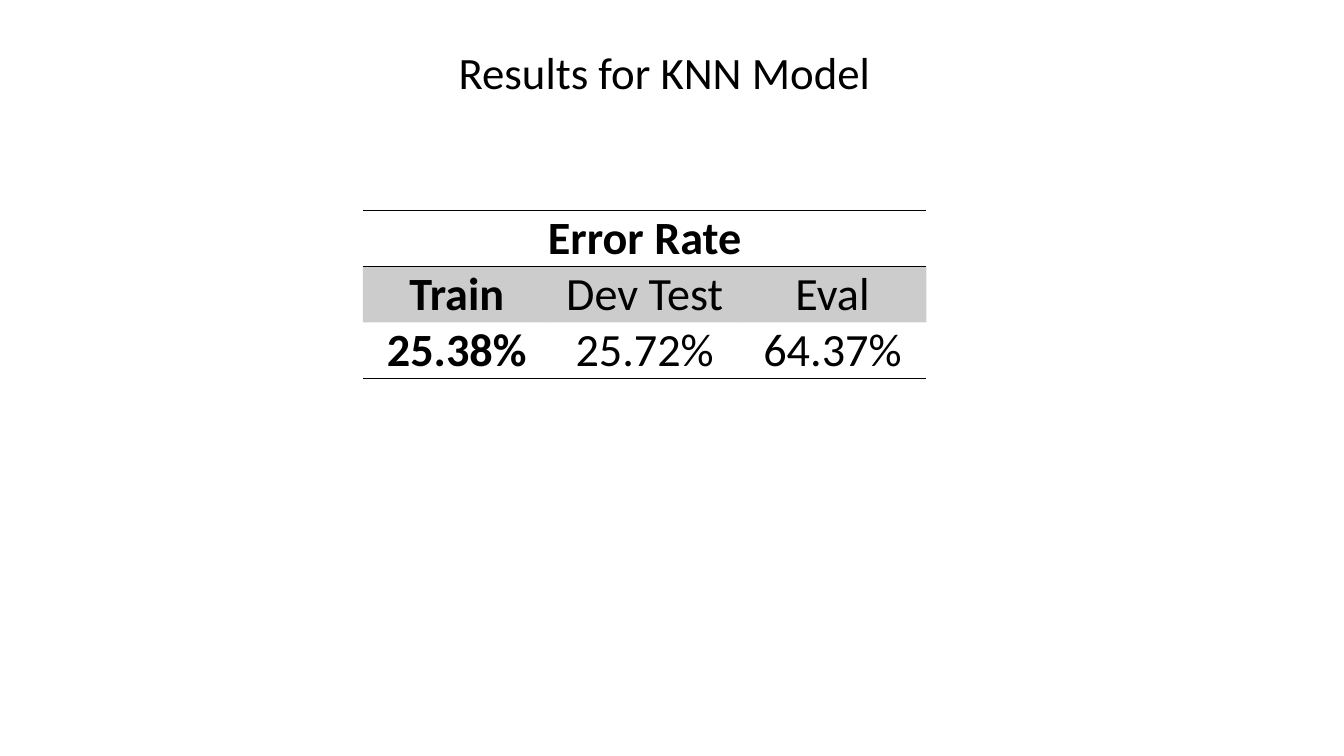
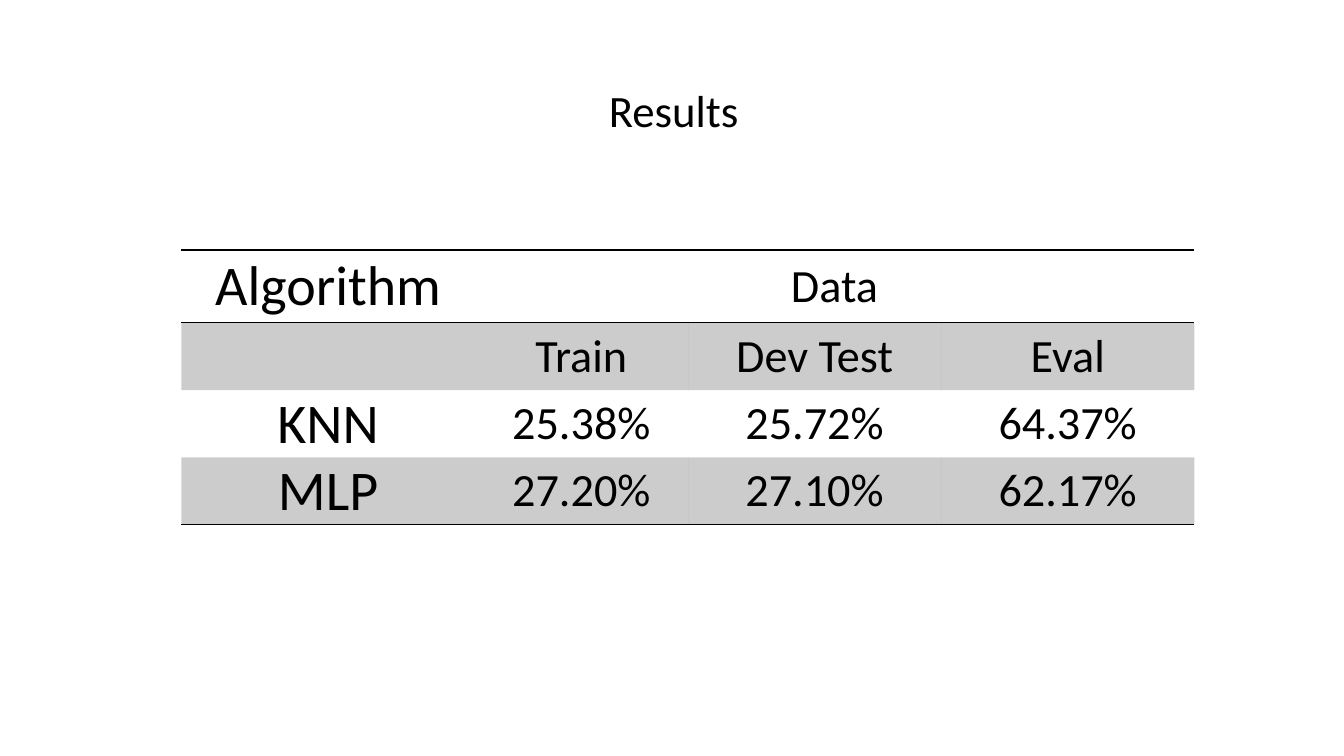
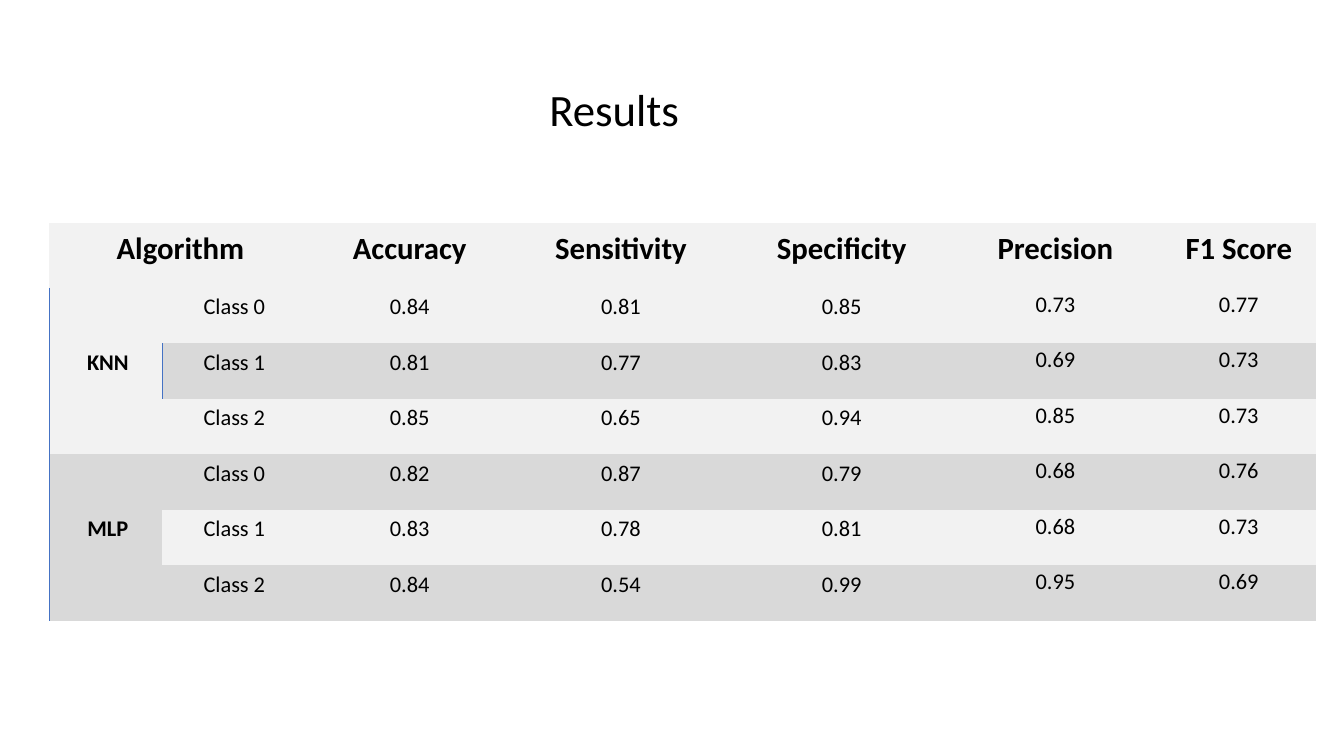
import dataclasses

import lxml.etree
import pptx
import pptx.dml.color
import pptx.enum.text
import pptx.oxml.ns
import pptx.util

Pt = pptx.util.Pt
ANCHOR = pptx.enum.text.MSO_ANCHOR
ALIGN = pptx.enum.text.PP_ALIGN
qn = pptx.oxml.ns.qn


@dataclasses.dataclass(frozen=True)
class Theme:
    font: str = "Calibri"
    ink: str = "000000"
    accent: str = "4472C4"
    light: str = "F2F2F2"
    dark: str = "D9D9D9"
    band_opacity: int = 20
    rule_width: int = 1
    title_size: int = 32
    rate_size: int = 33
    model_size: int = 40
    metric_head_size: int = 22
    metric_size: int = 16
    table_style: str = "{2D5ABB26-0587-4C30-8999-92F81FD0307C}"


THEME = Theme()
RATE_CELL = {
    "margin_left": Pt(9.6),
    "margin_top": 0,
    "margin_right": Pt(9.6),
    "margin_bottom": 0,
    "vertical_anchor": ANCHOR.MIDDLE,
}
METRIC_CELL = {
    "margin_left": Pt(6.5),
    "margin_top": Pt(2.2),
    "margin_right": Pt(3.6),
    "margin_bottom": Pt(14.4),
    "vertical_anchor": ANCHOR.MIDDLE,
}


def set_attrs(obj, values):
    for name, value in values.items():
        setattr(obj, name, value)


def add_text(tf, text, size, bold=False, align=ALIGN.CENTER):
    p = tf.paragraphs[0]
    p.alignment = align
    r = p.add_run()
    r.text = text
    set_attrs(r.font, {"name": THEME.font, "size": Pt(size), "bold": bold})
    r.font.color.rgb = pptx.dml.color.RGBColor.from_string(THEME.ink)


def add_titled_slide(prs, title, left, top, width):
    s = prs.slides.add_slide(prs.slide_layouts[5])
    sp = s.shapes.title
    set_attrs(sp, {"left": Pt(left), "top": Pt(top), "width": Pt(width), "height": Pt(46)})
    tf = sp.text_frame
    set_attrs(tf, {
        "word_wrap": True,
        "vertical_anchor": ANCHOR.TOP,
        "auto_size": pptx.enum.text.MSO_AUTO_SIZE.SHAPE_TO_FIT_TEXT,
    })
    add_text(tf, title, THEME.title_size, align=ALIGN.LEFT)
    return s


def add_plain_table(s, left, top, widths, heights):
    frame = s.shapes.add_table(
        len(heights), len(widths), Pt(left), Pt(top), Pt(sum(widths)), Pt(sum(heights))
    )
    table = frame.table
    set_attrs(table, {"first_row": False, "horz_banding": False})
    next(frame.element.iter(qn("a:tableStyleId"))).text = THEME.table_style
    for column, width in zip(table.columns, widths):
        column.width = Pt(width)
    for row, height in zip(table.rows, heights):
        row.height = Pt(height)
    return table


def add_border(cell, side, color):
    tc_pr = cell._tc.get_or_add_tcPr()
    ln = lxml.etree.SubElement(tc_pr, qn(f"a:ln{side}"), w=str(Pt(THEME.rule_width)))
    if color is None:
        lxml.etree.SubElement(ln, qn("a:noFill"))
        return
    fill = lxml.etree.SubElement(ln, qn("a:solidFill"))
    lxml.etree.SubElement(fill, qn("a:srgbClr"), val=color)


def fill_cell(cell, color, opacity=100):
    if color is None:
        cell.fill.background()
        return
    cell.fill.solid()
    cell.fill.fore_color.rgb = pptx.dml.color.RGBColor.from_string(color)
    if opacity < 100:
        clr = cell._tc.tcPr.find(qn("a:solidFill")).find(qn("a:srgbClr"))
        lxml.etree.SubElement(clr, qn("a:alpha"), val=str(opacity * 1000))


def add_rate_table(s, left, top, widths, heights, rows, merge_from, bold_cells=(), model_col=None):
    table = add_plain_table(s, left, top, widths, heights)
    table.cell(0, merge_from).merge(table.cell(0, len(widths) - 1))
    for i, row in enumerate(rows):
        sides = "TB" if i == 0 else "B" if i == len(rows) - 1 else ""
        for j, text in enumerate(row):
            cell = table.cell(i, j)
            set_attrs(cell, RATE_CELL)
            for side in sides:
                add_border(cell, side, THEME.ink)
            fill_cell(cell, THEME.ink if i % 2 else None, THEME.band_opacity)
            if text:
                size = THEME.model_size if j == model_col else THEME.rate_size
                add_text(cell.text_frame, text, size, (i, j) in bold_cells)


def add_metric_table(s, left, top, widths, heights, heads, models):
    table = add_plain_table(s, left, top, widths, heights)
    table.cell(0, 0).merge(table.cell(0, 1))
    rows = [heads]
    for model, scores in models.items():
        first = len(rows)
        table.cell(first, 0).merge(table.cell(first + len(scores) - 1, 0))
        for k, values in enumerate(scores):
            rows.append([model if k == 0 else "", f"Class {k}", *values])

    for i, row in enumerate(rows):
        band = THEME.dark if i and i % 2 == 0 else THEME.light
        for j, text in enumerate(row):
            cell = table.cell(i, j)
            set_attrs(cell, METRIC_CELL)
            if j >= 5 or (i and j == 1):
                cell.margin_right = Pt(7.2)
            if i == 0:
                cell.vertical_anchor = ANCHOR.BOTTOM
            elif j >= 5:
                cell.vertical_anchor = ANCHOR.TOP
            if i and j == 0:
                add_border(cell, "L", THEME.accent)
            elif (i, j) == (2, 1):
                add_border(cell, "L", THEME.accent)
                add_border(cell, "R", None)
            elif (i, j) == (2, 2):
                add_border(cell, "L", None)
            if j == 0:
                color = THEME.dark if i > 3 else THEME.light
            else:
                color = band
            fill_cell(cell, color)
            if text:
                size = THEME.metric_size if i else THEME.metric_head_size
                add_text(cell.text_frame, text, size, i == 0 or j == 0)


def main():
    prs = pptx.Presentation()
    set_attrs(prs, {"slide_width": Pt(960), "slide_height": Pt(540)})

    s = add_titled_slide(prs, "Results for KNN Model", 320.4, 28.5, 319)
    add_rate_table(
        s, 259.2, 150.3, [134.2] * 3, [40] * 3,
        [
            ["Error Rate", "", ""],
            ["Train", "Dev Test", "Eval"],
            ["25.38%", "25.72%", "64.37%"],
        ],
        merge_from=0,
        bold_cells={(0, 0), (1, 0), (2, 0)},
    )

    s = add_titled_slide(prs, "Results", 427.7, 55.4, 139.7)
    add_rate_table(
        s, 129.6, 178.6, [209.5, 152.4, 180.8, 180.8], [52, 48, 48, 48],
        [
            ["Algorithm", "Data", "", ""],
            ["", "Train", "Dev Test", "Eval"],
            ["KNN", "25.38%", "25.72%", "64.37%"],
            ["MLP", "27.20%", "27.10%", "62.17%"],
        ],
        merge_from=1,
        model_col=0,
    )

    s = add_titled_slide(prs, "Results", 385.2, 54.7, 123.8)
    add_metric_table(
        s, 35.3, 159.2,
        [80.6, 103.7, 143.3, 158.4, 157, 151.9, 110.2],
        [46.4] + [39.65] * 6,
        ["Algorithm", "", "Accuracy", "Sensitivity", "Specificity", "Precision", "F1 Score"],
        {
            "KNN": [
                ["0.84", "0.81", "0.85", "0.73", "0.77"],
                ["0.81", "0.77", "0.83", "0.69", "0.73"],
                ["0.85", "0.65", "0.94", "0.85", "0.73"],
            ],
            "MLP": [
                ["0.82", "0.87", "0.79", "0.68", "0.76"],
                ["0.83", "0.78", "0.81", "0.68", "0.73"],
                ["0.84", "0.54", "0.99", "0.95", "0.69"],
            ],
        },
    )

    prs.save("out.pptx")


if __name__ == "__main__":
    main()
